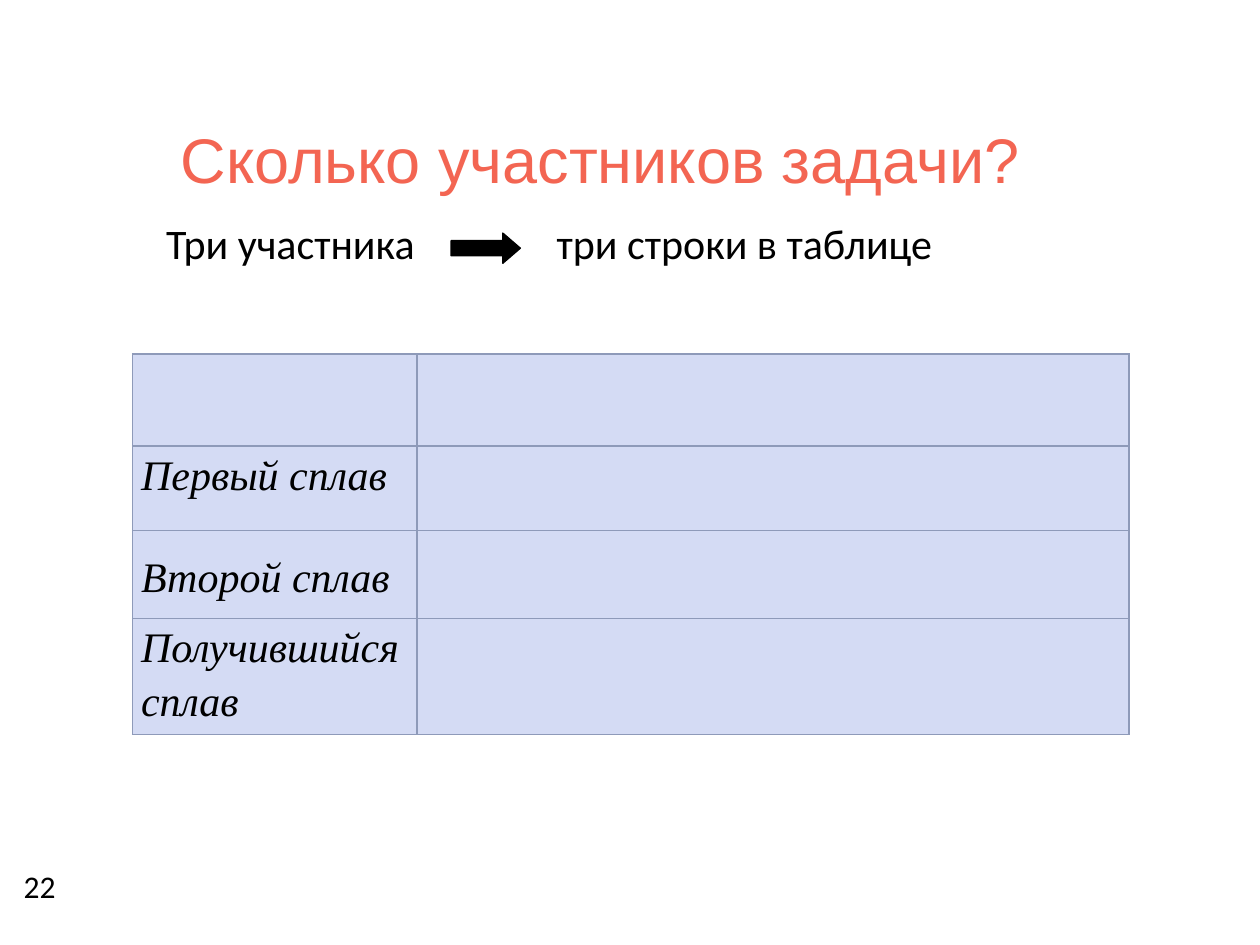
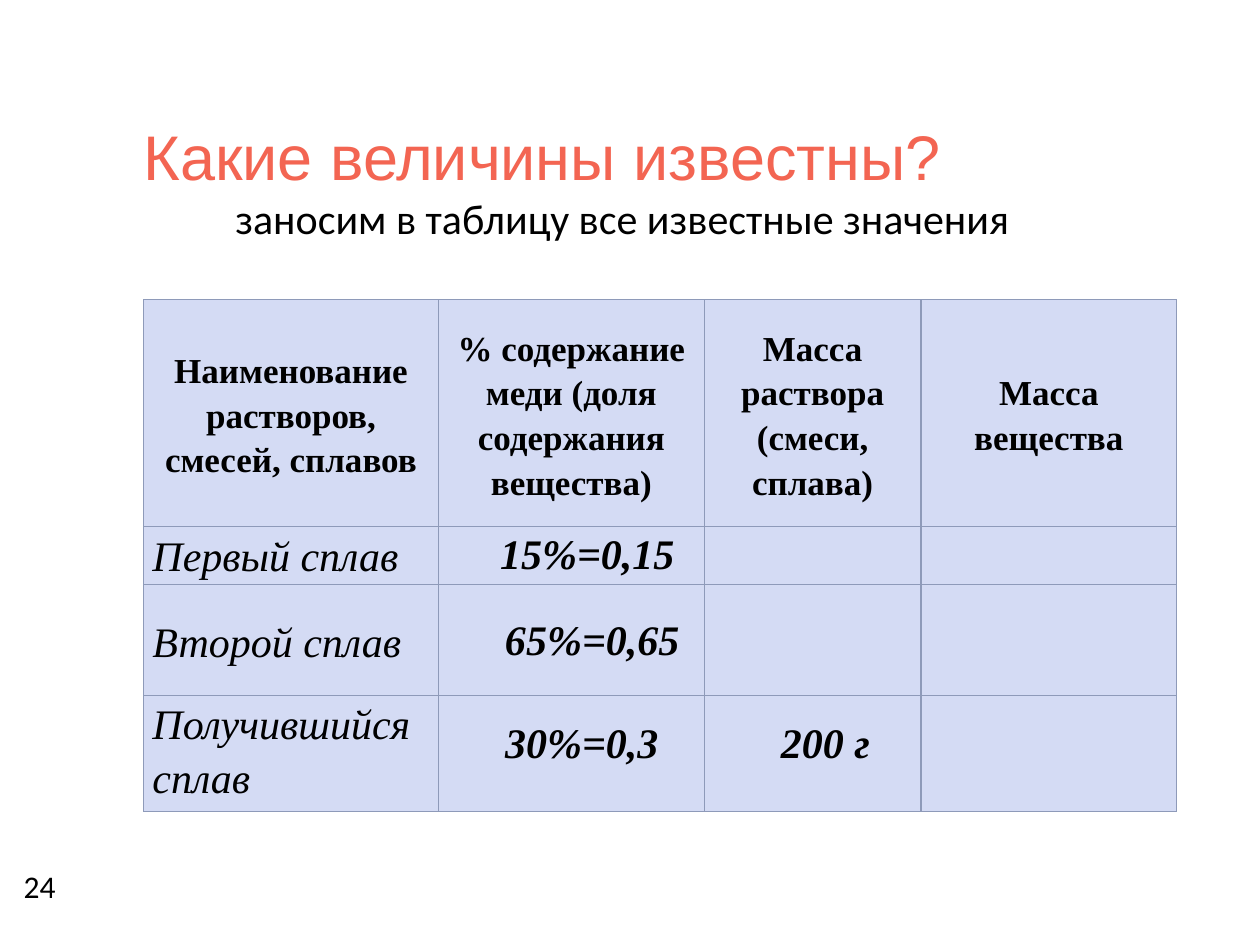
from dataclasses import dataclass

import pptx
import pptx.chart.data
import pptx.dml.color
import pptx.enum.shapes
import pptx.enum.text
import pptx.oxml
import pptx.oxml.ns
import pptx.slide
import pptx.table
import pptx.text.text
import pptx.util
from pptx.util import Inches

RGBColor = pptx.dml.color.RGBColor
Align = pptx.enum.text.PP_ALIGN
Anchor = pptx.enum.text.MSO_ANCHOR

CORAL = RGBColor(0xF3, 0x65, 0x52)
BLACK = RGBColor(0, 0, 0)
CELL_BLUE = RGBColor(0xD4, 0xDB, 0xF4)
BORDER_BLUE = RGBColor(0x8E, 0x9A, 0xB9)
TITLE_FONT, BODY_FONT, TABLE_FONT = "Arial", "Calibri", "Times New Roman"


@dataclass(frozen=True)
class Box:
    left: float
    top: float
    width: float
    height: float

    def emu(self) -> tuple:
        return tuple(Inches(v) for v in (self.left, self.top, self.width, self.height))


@dataclass(frozen=True)
class Label:
    text: str
    box: Box


@dataclass(frozen=True)
class Grid:
    left: float
    top: float
    cols: tuple[float, ...]
    rows: tuple[float, ...]
    headers: tuple[str, ...] = ()


ALLOYS = ("Первый сплав", "Второй сплав", "Получившийся сплав")
HEADERS = (
    "Наименование растворов, смесей, сплавов",
    "% содержание меди (доля содержания вещества)",
    "Масса раствора (смеси, сплава)",
    "Масса вещества",
)
KNOWN_VALUES = (
    Label("15%=0,15", Box(3.87, 4.14, 2.11, 0.81)),
    Label("65%=0,65", Box(3.91, 4.82, 2.03, 0.81)),
    Label("30%=0,3", Box(3.91, 5.64, 1.88, 0.81)),
    Label("200 г", Box(6.1, 5.64, 1.33, 0.81)),
)


def write(tf: pptx.text.text.TextFrame, text: str, *, font: str = BODY_FONT,
          size: float = 24, color: RGBColor = BLACK, bold: bool = False,
          italic: bool = False, align: Align = Align.LEFT,
          anchor: Anchor = Anchor.TOP, spacing: float = 1.0) -> None:
    tf.word_wrap = True
    tf.vertical_anchor = anchor
    p = tf.paragraphs[0]
    p.alignment, p.line_spacing = align, spacing
    r = p.add_run()
    r.text = text
    f = r.font
    f.name, f.size, f.bold, f.italic = font, pptx.util.Pt(size), bold, italic
    f.color.rgb = color


def add_text(s: pptx.slide.Slide, label: Label, **style) -> pptx.text.text.TextFrame:
    tf = s.shapes.add_textbox(*label.box.emu()).text_frame
    write(tf, label.text, **style)
    return tf


def add_slide(prs, title: Label, number: str) -> pptx.slide.Slide:
    s = prs.slides.add_slide(prs.slide_layouts[5])
    sp = s.shapes.title
    sp.left, sp.top, sp.width, sp.height = title.box.emu()
    sp.text_frame.auto_size = pptx.enum.text.MSO_AUTO_SIZE.NONE
    write(sp.text_frame, title.text, font=TITLE_FONT, size=36, color=CORAL,
          align=Align.CENTER)
    add_text(s, Label(number, Box(0.09, 6.83, 0.64, 0.53)), size=18)
    return s


def set_tab(tf: pptx.text.text.TextFrame, position: float) -> None:
    """Put a left tab stop in the first paragraph, before its defaults."""
    pPr = tf.paragraphs[0]._p.get_or_add_pPr()
    pPr.append(pptx.oxml.parse_xml(
        f'<a:tabLst {pptx.oxml.ns.nsdecls("a")}>'
        f'<a:tab pos="{Inches(position)}" algn="l"/></a:tabLst>'))


def style_cell(cell: pptx.table._Cell) -> None:
    tcPr = cell._tc.get_or_add_tcPr()
    for side in ("lnL", "lnR", "lnT", "lnB"):
        tcPr.append(pptx.oxml.parse_xml(
            f'<a:{side} {pptx.oxml.ns.nsdecls("a")} w="{pptx.util.Pt(0.75)}">'
            f'<a:solidFill><a:srgbClr val="{BORDER_BLUE}"/></a:solidFill></a:{side}>'))
    cell.fill.solid()
    cell.fill.fore_color.rgb = CELL_BLUE


def write_cell(cell: pptx.table._Cell, text: str, anchor: Anchor, **style) -> None:
    cell.margin_left = cell.margin_right = Inches(0.07)
    cell.margin_top = cell.margin_bottom = 0
    write(cell.text_frame, text, font=TABLE_FONT, spacing=1.15, **style)
    cell.vertical_anchor = anchor


def add_alloy_table(s: pptx.slide.Slide, grid: Grid) -> None:
    box = Box(grid.left, grid.top, sum(grid.cols), sum(grid.rows))
    table = s.shapes.add_table(len(grid.rows), len(grid.cols), *box.emu()).table
    table.first_row = table.horz_banding = False
    for col, width in zip(table.columns, grid.cols):
        col.width = Inches(width)
    for row, height in zip(table.rows, grid.rows):
        row.height = Inches(height)
    for cell in table.iter_cells():
        style_cell(cell)
    for c, text in enumerate(grid.headers):
        write_cell(table.cell(0, c), text, Anchor.MIDDLE, size=20, bold=True,
                   align=Align.CENTER)
    for r, text in enumerate(ALLOYS, start=1):
        anchor = Anchor.MIDDLE if r == 2 else Anchor.TOP
        write_cell(table.cell(r, 0), text, anchor, italic=True, align=Align.JUSTIFY)


def add_participants_slide(prs) -> None:
    s = add_slide(prs, Label("Сколько участников задачи?", Box(0.43, 0.91, 8.67, 1.25)), "22")
    tf = add_text(s, Label("Три участника\tтри строки в таблице", Box(1.22, 1.68, 6.93, 0.84)))
    set_tab(tf, 3.1)
    arrow = s.shapes.add_shape(pptx.enum.shapes.MSO_SHAPE.RIGHT_ARROW,
                               *Box(3.58, 1.85, 0.55, 0.24).emu())
    arrow.adjustments[0], arrow.adjustments[1] = 0.5, 0.58
    arrow.shadow.inherit = False
    arrow.fill.solid()
    arrow.fill.fore_color.rgb = arrow.line.color.rgb = BLACK
    arrow.line.width = pptx.util.Pt(0.75)
    add_alloy_table(s, Grid(1.05, 2.81, (2.26, 5.65), (0.73, 0.67, 0.7, 0.73)))


def add_known_values_slide(prs) -> None:
    s = add_slide(prs, Label("Какие величины известны?", Box(-0.03, 0.88, 8.67, 1.25)), "24")
    add_text(s, Label("заносим в таблицу все известные значения", Box(1.77, 1.48, 8.41, 1.09)))
    add_alloy_table(s, Grid(1.14, 2.38, (2.34, 2.11, 1.72, 2.03),
                            (1.8, 0.45, 0.88, 0.92), HEADERS))
    for value in KNOWN_VALUES:
        add_text(s, value, font=TABLE_FONT, bold=True, italic=True)


def main() -> None:
    prs = pptx.Presentation()
    prs.slide_width, prs.slide_height = Inches(10), Inches(7.5)
    add_participants_slide(prs)
    add_known_values_slide(prs)
    prs.save("out.pptx")


if __name__ == "__main__":
    main()
